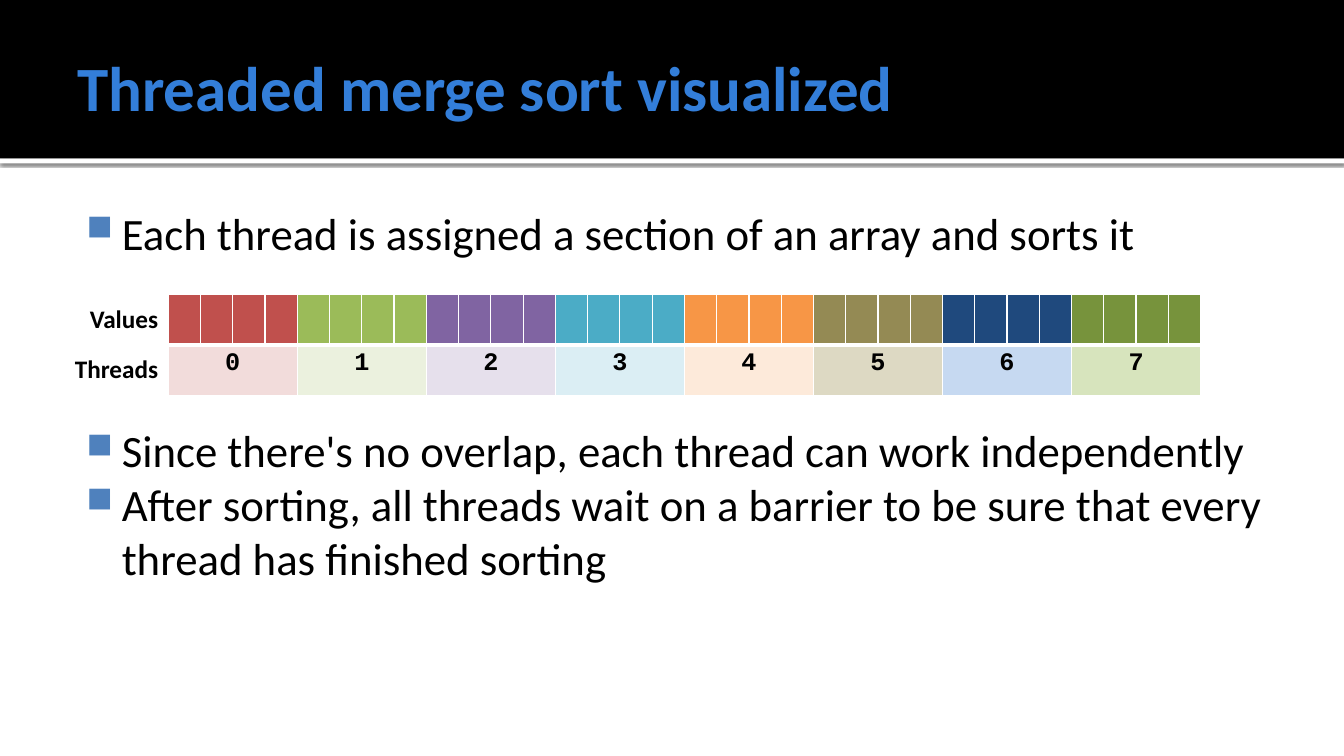
from dataclasses import dataclass

from lxml import etree
from pptx import Presentation, util as u
from pptx.dml.color import RGBColor
from pptx.enum import shapes, text
from pptx.oxml.ns import qn


@dataclass(frozen=True)
class Theme:
    font: str = "Calibri"
    mono: str = "Courier New"
    black: str = "000000"
    white: str = "FFFFFF"
    title: str = "337ED9"
    bullet: str = "4F81BD"
    title_size: int = 45
    body_size: int = 32
    table_size: int = 18


@dataclass(frozen=True)
class Box:
    left: float
    top: float
    width: float
    height: float

    def lengths(self) -> list[u.Cm]:
        return [u.Cm(v) for v in (self.left, self.top, self.width, self.height)]


@dataclass(frozen=True)
class Thread:
    values: str
    label: str


@dataclass(frozen=True)
class Bullet:
    words: str
    space_before: int = 0


THEME = Theme()
THREADS = [
    Thread("C0504D", "F2DCDB"),
    Thread("9BBB59", "EBF1DE"),
    Thread("8064A2", "E6E0EC"),
    Thread("4BACC6", "DBEEF4"),
    Thread("F79646", "FDEADA"),
    Thread("948A54", "DDD9C3"),
    Thread("1F497D", "C6D9F1"),
    Thread("77933C", "D7E4BD"),
]
VALUES_PER_THREAD = 4
TABLE = Box(1.47, 7.42, 28.81, 2.54)
LABEL_WIDTH = 2.77
BULLETS = [
    Bullet("Each thread is assigned a section of an array and sorts it"),
    # Leaves room for the table
    Bullet("Since there's no overlap, each thread can work independently", 117),
    Bullet("After sorting, all threads wait on a barrier to be sure that every "
           "thread has finished sorting"),
]


def add_xml(parent, tag: str, **attrs):
    return etree.SubElement(parent, qn(tag), {k: str(v) for k, v in attrs.items()})


def add_run(p, words: str, size: int, color: str = THEME.black,
            font: str = THEME.font, bold: bool = False) -> None:
    r = p.add_run()
    r.text = words
    r.font.name, r.font.size, r.font.bold = font, u.Pt(size), bold
    r.font.color.rgb = RGBColor.from_string(color)


def add_bar(s, box: Box, color: str):
    sp = s.shapes.add_shape(shapes.MSO_SHAPE.RECTANGLE, *box.lengths())
    sp.shadow.inherit = False
    sp.fill.solid()
    sp.fill.fore_color.rgb = RGBColor.from_string(color)
    sp.line.fill.background()
    return sp


def add_drop_shadow(sp) -> None:
    effects = sp._element.spPr.find(qn("a:effectLst"))
    shadow = add_xml(effects, "a:outerShdw", blurRad=u.Pt(2.5), dist=u.Pt(0.8),
                     dir=90 * 60000, algn="tl", rotWithShape=0)
    color = add_xml(shadow, "a:srgbClr", val=THEME.black)
    add_xml(color, "a:alpha", val=60000)


def add_text_frame(s, box: Box, insets: Box):
    """Add a wrapping text box; insets run left, top, right, bottom."""
    tf = s.shapes.add_textbox(*box.lengths()).text_frame
    tf.word_wrap = True
    (tf.margin_left, tf.margin_top,
     tf.margin_right, tf.margin_bottom) = insets.lengths()
    return tf


def add_bullets(tf, bullets: list[Bullet]) -> None:
    for i, bullet in enumerate(bullets):
        p = tf.add_paragraph() if i else tf.paragraphs[0]
        p.space_before = u.Pt(bullet.space_before)
        pPr = p._p.get_or_add_pPr()
        pPr.set("marL", str(u.Cm(1.22)))
        pPr.set("indent", str(u.Cm(-0.89)))
        add_xml(add_xml(pPr, "a:buClr"), "a:srgbClr", val=THEME.bullet)
        add_xml(pPr, "a:buSzPct", val=80000)
        add_xml(pPr, "a:buChar", char="■")
        add_run(p, bullet.words, THEME.body_size)


def style_cell(cell, fill: str | None, top: int, bottom: int) -> None:
    """Set white borders, top and bottom in points, and then the fill."""
    tcPr = cell._tc.get_or_add_tcPr()
    for side, width in zip("LRTB", (1, 1, top, bottom)):
        ln = add_xml(tcPr, f"a:ln{side}", w=u.Pt(width))
        add_xml(add_xml(ln, "a:solidFill"), "a:srgbClr", val=THEME.white)
    if fill is None:
        cell.fill.background()
    else:
        cell.fill.solid()
        cell.fill.fore_color.rgb = RGBColor.from_string(fill)


def add_thread_table(s) -> None:
    count = len(THREADS) * VALUES_PER_THREAD
    table = s.shapes.add_table(2, count + 1, *TABLE.lengths()).table
    table.first_row = table.horz_banding = False
    table.columns[0].width = u.Cm(LABEL_WIDTH)
    for col in range(1, count + 1):
        table.columns[col].width = u.Cm((TABLE.width - LABEL_WIDTH) / count)

    for row, (label, top, bottom) in enumerate([("Values", 1, 3), ("Threads", 3, 1)]):
        cell = table.cell(row, 0)
        cell.vertical_anchor = text.MSO_ANCHOR.MIDDLE
        style_cell(cell, None, top, bottom)
        p = cell.text_frame.paragraphs[0]
        p.alignment = text.PP_ALIGN.RIGHT
        add_run(p, label, THEME.table_size, bold=True)

    for i, thread in enumerate(THREADS):
        first = 1 + i * VALUES_PER_THREAD
        last = first + VALUES_PER_THREAD - 1
        for col in range(first, last + 1):
            style_cell(table.cell(0, col), thread.values, 1, 3)
            style_cell(table.cell(1, col), thread.label, 3, 1)
        cell = table.cell(1, first)
        cell.merge(table.cell(1, last))
        p = cell.text_frame.paragraphs[0]
        p.alignment = text.PP_ALIGN.CENTER
        add_run(p, str(i), THEME.table_size, font=THEME.mono, bold=True)


def main() -> None:
    prs = Presentation()
    prs.slide_width, prs.slide_height = u.Cm(33.87), u.Cm(19.05)
    s = prs.slides.add_slide(prs.slide_layouts[6])

    add_drop_shadow(add_bar(s, Box(0, 3.99, 33.87, 0.13), THEME.white))
    add_bar(s, Box(0, 0, 33.87, 3.99), THEME.black)

    title = add_text_frame(s, Box(1.7, 0.43, 30.48, 3.48), Box(0.25, 0.13, 0.13, 0.13))
    title.vertical_anchor = text.MSO_ANCHOR.MIDDLE
    add_run(title.paragraphs[0], "Threaded merge sort visualized",
            THEME.title_size, THEME.title, bold=True)

    body = add_text_frame(s, Box(1.7, 4.93, 30.48, 12.85), Box(0.15, 0.25, 0.25, 0.13))
    add_bullets(body, BULLETS)
    add_thread_table(s)
    prs.save("out.pptx")


if __name__ == "__main__":
    main()
